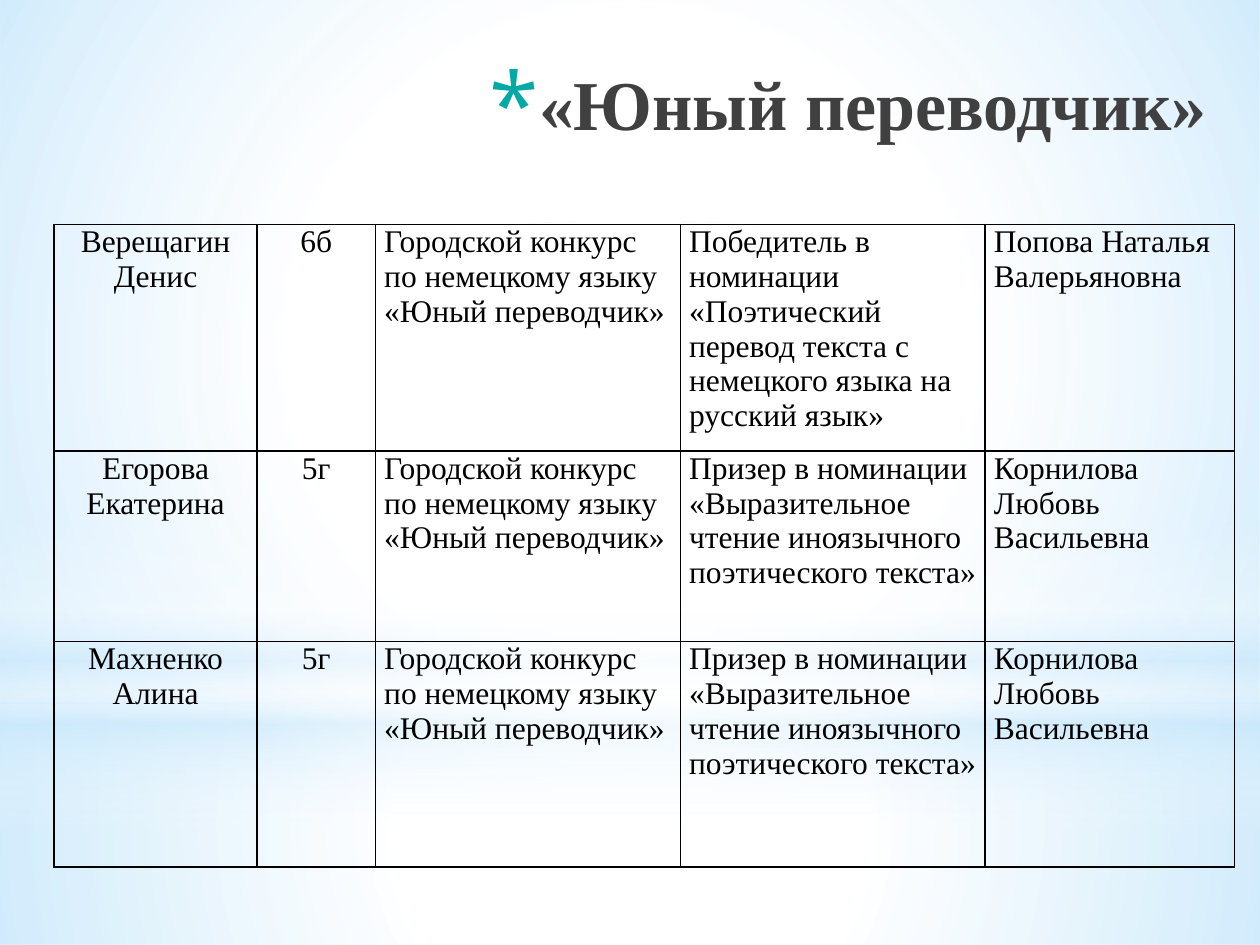
from lxml import etree
from pptx import Presentation
from pptx.dml.color import RGBColor
from pptx.enum.shapes import MSO_SHAPE
from pptx.enum.text import MSO_ANCHOR, PP_ALIGN
from pptx.oxml.ns import qn
from pptx.util import Inches, Pt

RECTANGLE, OVAL = MSO_SHAPE.RECTANGLE, MSO_SHAPE.OVAL
CENTER, LEFT, RIGHT = PP_ALIGN.CENTER, PP_ALIGN.LEFT, PP_ALIGN.RIGHT
TOP = MSO_ANCHOR.TOP

FONT = "Times New Roman"
COLORS = {
    "white": "FFFFFF",
    "sky": "C6E7FC",
    "title": "404040",
    "bullet": "04A8A4",
    "ink": "000000",
}

BACKDROP = [
    (RECTANGLE, (0, 5.58, 10, 1.92), None,
     [(0, "white", 91), (37, "white", 76), (100, "sky", 79)]),
    (RECTANGLE, (0, 0, 10, 5.58), None,
     [(0, "white", 89), (48, "white", 62), (100, "sky", 79)]),
    (RECTANGLE, (0, 4.12, 10, 2.5), 90,
     [(0, "white", 0), (29, "white", 30), (45, "sky", 40),
      (55, "white", 26), (65, "sky", 60), (100, "white", 0)]),
    (OVAL, (0, 1.75, 10, 5.58), None,
     [(0, "white", 100), (56, "white", 0)]),
]

CONTEST = "Городской конкурс по немецкому языку «Юный переводчик»"
READING_PRIZE = ("Призер в номинации «Выразительное чтение иноязычного "
                 "поэтического текста»")
TEACHER = "Корнилова Любовь Васильевна"
RESULTS = [
    ("Верещагин Денис", "6б", CONTEST,
     "Победитель в номинации «Поэтический перевод текста с немецкого языка "
     "на русский язык»", "Попова Наталья Валерьяновна"),
    ("Егорова Екатерина", "5г", CONTEST, READING_PRIZE, TEACHER),
    ("Махненко Алина", "5г", CONTEST, READING_PRIZE, TEACHER),
]
COLUMN_WIDTHS = [1.61, 0.94, 2.42, 2.42, 1.98]
ROW_HEIGHTS = [1.8, 1.51, 1.79]
CENTERED_COLUMNS = 2


def add_element(parent, tag, **attributes):
    values = {name: str(value) for name, value in attributes.items()}
    return etree.SubElement(parent, qn(tag), values)


def style_font(font, size, color, bold=False):
    font.name = FONT
    font.size = Pt(size)
    font.bold = bold
    font.color.rgb = RGBColor.from_string(COLORS[color])


def add_glow(page, preset, place, angle, stops):
    shape = page.shapes.add_shape(preset, *map(Inches, place))
    shape.shadow.inherit = False
    shape.line.fill.background()
    shape.fill.gradient()
    gradient = shape._element.spPr.find(qn("a:gradFill"))
    for child in list(gradient):
        gradient.remove(child)
    stop_list = add_element(gradient, "a:gsLst")
    for position, color, opacity in stops:
        stop = add_element(stop_list, "a:gs", pos=position * 1000)
        tint = add_element(stop, "a:srgbClr", val=COLORS[color])
        add_element(tint, "a:alpha", val=opacity * 1000)
    if angle is None:
        route = add_element(gradient, "a:path", path="circle")
        add_element(route, "a:fillToRect", l=50000, t=50000, r=50000, b=50000)
    else:
        add_element(gradient, "a:lin", ang=angle * 60000, scaled=0)


def add_title(page, text):
    box = page.shapes.add_textbox(Inches(2.56), Inches(0.36), Inches(7.12), Inches(1.25))
    frame = box.text_frame
    frame.word_wrap = True
    frame.vertical_anchor = TOP
    frame.margin_top = Inches(0.12)
    frame.text = text
    para = frame.paragraphs[0]
    para.alignment = RIGHT
    properties = para._p.get_or_add_pPr()
    properties.set("marL", str(Inches(0.35)))
    properties.set("indent", str(-Inches(0.35)))
    bullet_color = add_element(properties, "a:buClr")
    add_element(bullet_color, "a:srgbClr", val=COLORS["bullet"])
    add_element(properties, "a:buSzPct", val=128000)
    add_element(properties, "a:buFont", typeface="Open Sans")
    add_element(properties, "a:buChar", char="*")
    style_font(para.runs[0].font, 40, "title", bold=True)


def add_borders(cell):
    properties = cell._tc.get_or_add_tcPr()
    for index, side in enumerate(("a:lnL", "a:lnR", "a:lnT", "a:lnB")):
        line = add_element(properties, side, w=Pt(1))
        fill = add_element(line, "a:solidFill")
        add_element(fill, "a:srgbClr", val=COLORS["ink"])
        properties.insert(index, line)


def fill_cell(cell, text, alignment):
    cell.fill.background()
    cell.margin_left = cell.margin_right = Inches(0.07)
    cell.margin_top = cell.margin_bottom = 0
    cell.vertical_anchor = TOP
    cell.text = text
    para = cell.text_frame.paragraphs[0]
    para.alignment = alignment
    style_font(para.runs[0].font, 18, "ink")
    add_borders(cell)


def add_results(page):
    frame = page.shapes.add_table(
        len(ROW_HEIGHTS), len(COLUMN_WIDTHS), Inches(0.43), Inches(1.78),
        Inches(sum(COLUMN_WIDTHS)), Inches(sum(ROW_HEIGHTS)))
    table = frame.table
    table.first_row = table.horz_banding = False
    for column, width in zip(table.columns, COLUMN_WIDTHS):
        column.width = Inches(width)
    for row, height, texts in zip(table.rows, ROW_HEIGHTS, RESULTS):
        row.height = Inches(height)
        for index, text in enumerate(texts):
            alignment = CENTER if index < CENTERED_COLUMNS else LEFT
            fill_cell(row.cells[index], text, alignment)


def main():
    deck = Presentation()
    deck.slide_width, deck.slide_height = Inches(10), Inches(7.5)
    page = deck.slides.add_slide(deck.slide_layouts[6])
    for glow in BACKDROP:
        add_glow(page, *glow)
    add_results(page)
    add_title(page, "«Юный переводчик»")
    deck.save("out.pptx")


if __name__ == "__main__":
    main()
